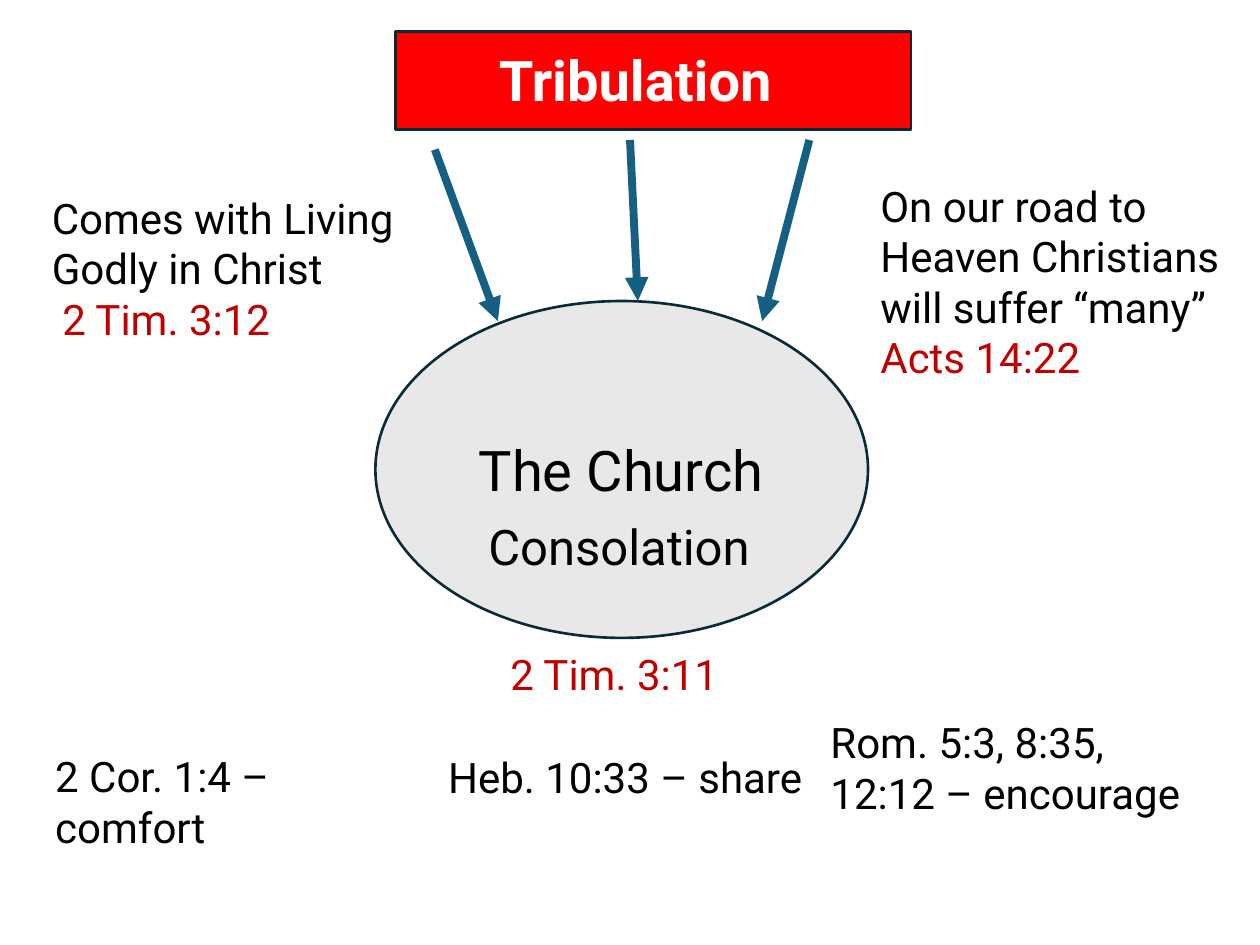
from lxml import etree
from pptx import Presentation
from pptx import util as u
from pptx.dml.color import RGBColor
from pptx.enum import shapes, text
from pptx.oxml.ns import qn

BLACK = RGBColor(0x00, 0x00, 0x00)
WHITE = RGBColor(0xFF, 0xFF, 0xFF)
RED = RGBColor(0xFF, 0x00, 0x00)
VERSE_RED = RGBColor(0xC0, 0x00, 0x00)
GREY = RGBColor(0xE8, 0xE8, 0xE8)
OUTLINE = RGBColor(0x09, 0x2A, 0x39)
TEAL = RGBColor(0x15, 0x60, 0x82)

deck = Presentation()
deck.slide_width, deck.slide_height = u.Pt(720), u.Pt(540)
page = deck.slides.add_slide(deck.slide_layouts[6])


def add_panel(kind, bounds, color):
    panel = page.shapes.add_shape(kind, *map(u.Pt, bounds))
    panel.shadow.inherit = False
    panel.fill.solid()
    panel.fill.fore_color.rgb = color
    panel.line.color.rgb = OUTLINE
    panel.line.width = u.Pt(1.5)


def add_span(para, words, size, color, bold=False):
    span = para.add_run()
    span.text = words
    span.font.name = "Roboto"
    span.font.size = u.Pt(size)
    span.font.bold = bold
    span.font.color.rgb = color


add_panel(shapes.MSO_SHAPE.OVAL, (214.5, 172, 281.5, 192.5), GREY)
add_panel(shapes.MSO_SHAPE.RECTANGLE, (226, 18, 294.5, 56), RED)

arrows = [
    (248.5, 85.5, 284.5, 183.5),
    (360, 80, 364.5, 172),
    (462.5, 80, 435.5, 183.5),
]
for ends in arrows:
    arrow = page.shapes.add_connector(shapes.MSO_CONNECTOR.STRAIGHT, *map(u.Pt, ends))
    arrow.line.color.rgb = TEAL
    arrow.line.width = u.Pt(4.5)
    etree.SubElement(arrow.line._get_or_add_ln(), qn("a:tailEnd"), type="triangle")
    etree.SubElement(arrow._element.spPr, qn("a:effectLst"))

labels = [
    ((278, 22.5, 214, 46), "Tribulation", 32, WHITE, True),
    ((266.5, 245.5, 178, 46), "The Church", 32, BLACK, False),
    ((272, 291.5, 166.5, 41), "Consolation", 28, BLACK, False),
    ((284.5, 367, 226, 36), "2 Tim. 3:11", 24, VERSE_RED, False),
    ((24.5, 425.5, 224, 36), "2 Cor. 1:4 – comfort", 24, BLACK, False),
    ((249, 426, 224, 36), "Heb. 10:33 – share", 24, BLACK, False),
    ((467.5, 406, 227.5, 65.5), "Rom. 5:3, 8:35, 12:12 – encourage", 24, BLACK, False),
    ((22.5, 106.5, 250, 94.5), "Comes with Living Godly in Christ", 24, BLACK, False),
    ((496, 99.5, 227.5, 124), "On our road to Heaven Christians will suffer “many”", 24, BLACK, False),
]
verses = {
    "Comes with Living Godly in Christ": ("2 Tim. 3:12", 6),
    "On our road to Heaven Christians will suffer “many”": ("Acts 14:22", 0),
}
for bounds, words, size, color, bold in labels:
    box = page.shapes.add_textbox(*map(u.Pt, bounds))
    frame = box.text_frame
    frame.word_wrap = True
    frame.auto_size = text.MSO_AUTO_SIZE.SHAPE_TO_FIT_TEXT
    add_span(frame.paragraphs[0], words, size, color, bold)
    if words in verses:
        verse, indent = verses[words]
        para = frame.add_paragraph()
        para._p.get_or_add_pPr().set("marL", str(u.Pt(indent)))
        add_span(para, verse, size, VERSE_RED)

deck.save("out.pptx")
